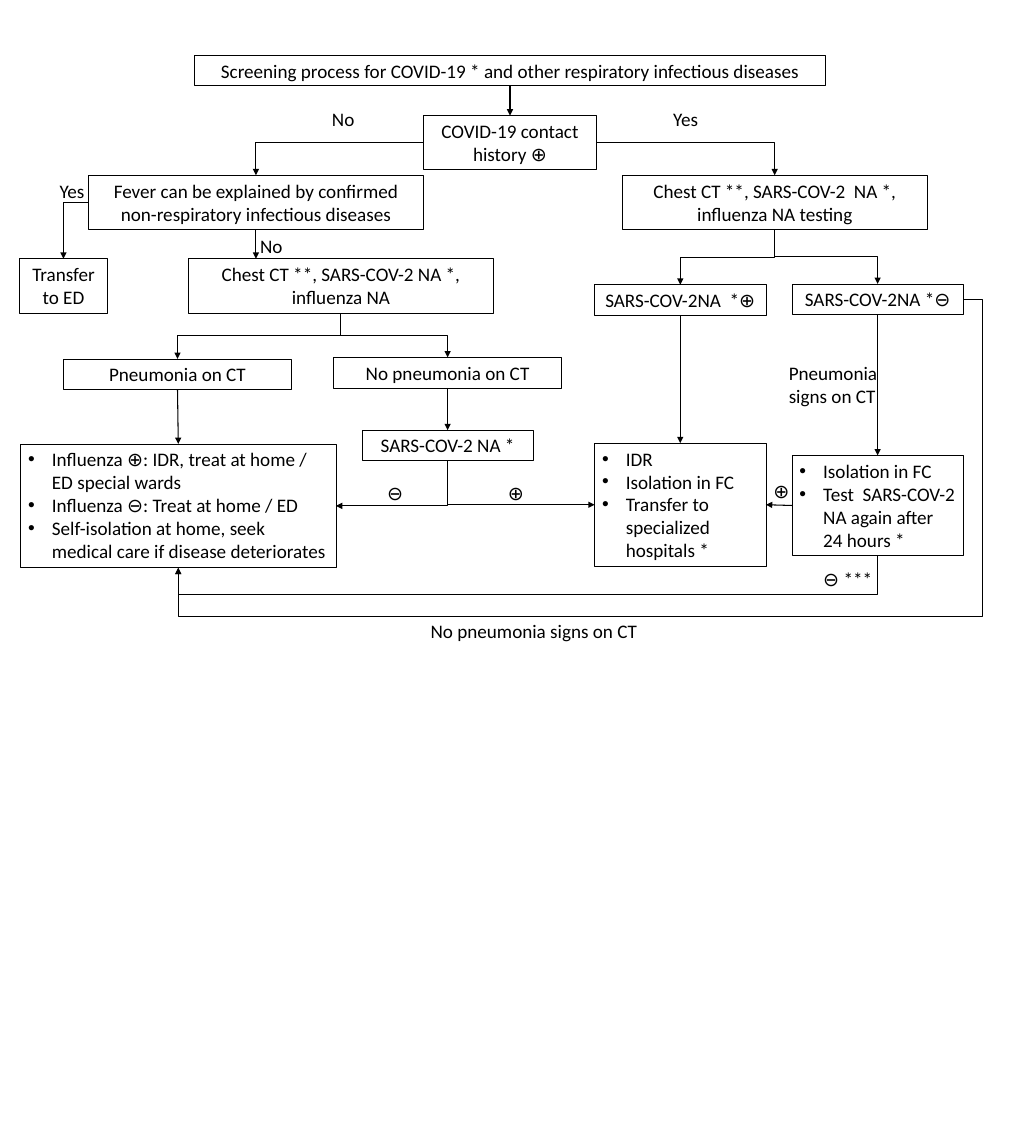
from dataclasses import dataclass
from enum import IntEnum
from typing import Optional

from lxml.etree import SubElement
from pptx import Presentation
from pptx.dml.color import RGBColor
from pptx.enum.shapes import MSO_CONNECTOR, MSO_SHAPE
from pptx.enum.text import MSO_ANCHOR, MSO_AUTO_SIZE, PP_ALIGN
from pptx.oxml.ns import qn
from pptx.util import Inches, Pt

BLACK = RGBColor(0x00, 0x00, 0x00)
FONT = "Calibri"
ONE_LINE = 0.4
TWO_LINES = 0.71
BULLET_INDENT = Inches(0.31)


class Side(IntEnum):
    TOP = 0
    LEFT = 1
    BOTTOM = 2
    RIGHT = 3


@dataclass(frozen=True)
class Box:
    name: str
    left: float
    top: float
    width: float
    height: float
    lines: tuple[str, ...]
    bulleted: bool = False


@dataclass(frozen=True)
class Link:
    begin: str
    begin_side: Side
    end: str
    end_side: Optional[Side] = None
    preset: str = "line"
    detours: tuple[float, ...] = ()


@dataclass(frozen=True)
class Label:
    left: float
    top: float
    width: float
    height: float
    text: str
    wrap: bool = False


TITLE = Box("screening", 2.54, 0.72, 8.25, ONE_LINE,
            ("Screening process for COVID-19 * and other respiratory infectious diseases",))

BOXES = [
    Box("contact", 5.53, 1.51, 2.27, TWO_LINES, ("COVID-19 contact history ⊕",)),
    Box("contact tests", 8.13, 2.29, 3.99, TWO_LINES,
        ("Chest CT **, SARS-COV-2  NA *, influenza NA testing",)),
    Box("fever", 1.16, 2.29, 4.37, TWO_LINES,
        ("Fever can be explained by confirmed non-respiratory infectious diseases",)),
    Box("pneumonia", 0.83, 4.69, 2.98, ONE_LINE, ("Pneumonia on CT",)),
    Box("emergency", 0.25, 3.38, 1.16, TWO_LINES, ("Transfer to ED",)),
    Box("fever tests", 2.46, 3.38, 3.99, TWO_LINES,
        ("Chest CT **, SARS-COV-2 NA *, influenza NA",)),
    Box("no pneumonia", 4.36, 4.67, 2.98, ONE_LINE, ("No pneumonia on CT",)),
    Box("home care", 0.27, 5.8, 4.12, 1.62,
        ("Influenza ⊕: IDR, treat at home / ED special wards",
         "Influenza ⊖: Treat at home / ED",
         "Self-isolation at home, seek medical care if disease deteriorates"), True),
    Box("virus test", 4.73, 5.62, 2.24, ONE_LINE, ("SARS-COV-2 NA *",)),
    Box("negative", 10.35, 3.71, 2.24, ONE_LINE, ("SARS-COV-2NA *⊖",)),
    Box("positive", 7.77, 3.72, 2.24, ONE_LINE, ("SARS-COV-2NA  *⊕",)),
    Box("retest", 10.35, 5.95, 2.24, 1.31,
        ("Isolation in FC", "Test  SARS-COV-2 NA again after 24 hours *"), True),
    Box("hospital", 7.77, 5.79, 2.24, 1.61,
        ("IDR", "Isolation in FC", "Transfer to specialized hospitals *"), True),
]

LINKS = [
    Link("screening", Side.BOTTOM, "contact", Side.TOP),
    Link("contact", Side.RIGHT, "contact tests", Side.TOP, "bentConnector2"),
    Link("contact", Side.LEFT, "fever", Side.TOP, "bentConnector2"),
    Link("fever", Side.LEFT, "emergency", Side.TOP, "bentConnector2"),
    Link("fever", Side.BOTTOM, "fever tests"),
    Link("fever tests", Side.BOTTOM, "pneumonia", Side.TOP, "bentConnector3"),
    Link("fever tests", Side.BOTTOM, "no pneumonia", Side.TOP, "bentConnector3"),
    Link("contact tests", Side.BOTTOM, "positive", Side.TOP, "bentConnector3"),
    Link("contact tests", Side.BOTTOM, "negative", Side.TOP, "bentConnector3"),
    Link("pneumonia", Side.BOTTOM, "home care", Side.TOP),
    Link("no pneumonia", Side.BOTTOM, "virus test", Side.TOP),
    Link("virus test", Side.BOTTOM, "home care", Side.RIGHT, "bentConnector2"),
    Link("virus test", Side.BOTTOM, "hospital", Side.LEFT, "bentConnector2"),
    Link("positive", Side.BOTTOM, "hospital", Side.TOP),
    Link("negative", Side.BOTTOM, "retest", Side.TOP),
    Link("retest", Side.BOTTOM, "home care", Side.BOTTOM, "bentConnector3", (0.51,)),
    Link("negative", Side.RIGHT, "home care", Side.BOTTOM, "bentConnector4", (-0.25, 4.15)),
    Link("retest", Side.LEFT, "hospital", Side.RIGHT),
]

LABELS = [
    Label(0.68, 2.3, 0.53, ONE_LINE, "Yes"),
    Label(3.3, 3.01, 0.5, ONE_LINE, "No"),
    Label(4.24, 1.36, 0.5, ONE_LINE, "No"),
    Label(8.7, 1.35, 0.53, ONE_LINE, "Yes"),
    Label(6.54, 6.24, 0.4, ONE_LINE, "⊕"),
    Label(4.96, 6.24, 0.45, ONE_LINE, "⊖"),
    Label(10.01, 6.21, 0.4, ONE_LINE, "⊕"),
    Label(10.66, 7.37, 0.89, ONE_LINE, "⊖ ***"),
    Label(10.21, 4.67, 1.47, TWO_LINES, "Pneumonia signs on CT", True),
    Label(5.53, 8.04, 3.36, ONE_LINE, "No pneumonia signs on CT", True),
]


def write_text(shape, lines, *, alignment=PP_ALIGN.LEFT, bulleted=False, wrap=True,
               auto_size=MSO_AUTO_SIZE.SHAPE_TO_FIT_TEXT) -> None:
    frame = shape.text_frame
    frame.word_wrap = wrap
    frame.auto_size = auto_size
    frame.vertical_anchor = MSO_ANCHOR.TOP
    frame.text = "\n".join(lines)
    for paragraph in frame.paragraphs:
        paragraph.alignment = alignment
        if bulleted:
            properties = paragraph._p.get_or_add_pPr()
            properties.set("marL", str(BULLET_INDENT))
            properties.set("indent", str(-BULLET_INDENT))
            SubElement(properties, qn("a:buFont"), typeface="Arial")
            SubElement(properties, qn("a:buChar"), char="•")
        for run in paragraph.runs:
            run.font.name = FONT
            run.font.size = Pt(18)
            run.font.color.rgb = BLACK


def format_box(shape, box: Box, **text_format) -> None:
    shape.fill.background()
    shape.line.color.rgb = BLACK
    shape.line.width = Pt(0.75)
    alignment = PP_ALIGN.LEFT if box.bulleted else PP_ALIGN.CENTER
    write_text(shape, box.lines, alignment=alignment, bulleted=box.bulleted, **text_format)


def draw_title(slide, box: Box):
    shape = slide.shapes.title
    shape.left, shape.top = Inches(box.left), Inches(box.top)
    shape.width, shape.height = Inches(box.width), Inches(box.height)
    format_box(shape, box, auto_size=MSO_AUTO_SIZE.NONE)
    return shape


def draw_box(slide, box: Box):
    shape = slide.shapes.add_shape(
        MSO_SHAPE.RECTANGLE, Inches(box.left), Inches(box.top), Inches(box.width), Inches(box.height))
    shape.shadow.inherit = False
    format_box(shape, box)
    return shape


def bend(connector, link: Link) -> None:
    across = connector.end_x - connector.begin_x
    width, height = connector.width, connector.height
    center_x, center_y = connector.left + width // 2, connector.top + height // 2
    upright = link.begin_side == Side.BOTTOM
    length, breadth = (height, width) if upright else (width, height)
    connector.left, connector.top = center_x - length // 2, center_y - breadth // 2
    connector.width, connector.height = length, breadth
    transform = connector._element.spPr.find(qn("a:xfrm"))
    rightward_drop = upright and across > 0
    transform.set("rot", str((270 if rightward_drop else 90) * 60000 if upright else 0))
    transform.set("flipH", str(int(rightward_drop or (not upright and across < 0))))
    transform.set("flipV", "0")
    geometry = connector._element.spPr.find(qn("a:prstGeom"))
    geometry.set("prst", link.preset)
    guides = geometry.find(qn("a:avLst"))
    for number, (detour, extent) in enumerate(zip(link.detours, (length, breadth)), 1):
        value = round(Inches(detour) / extent * 100000)
        SubElement(guides, qn("a:gd"), name=f"adj{number}", fmla=f"val {value}")


def draw_link(slide, link: Link, shapes: dict) -> None:
    straight = link.preset == "line"
    kind = MSO_CONNECTOR.STRAIGHT if straight else MSO_CONNECTOR.ELBOW
    connector = slide.shapes.add_connector(kind, 0, 0, 0, 0)
    connector.begin_connect(shapes[link.begin], link.begin_side)
    if link.end_side is None:
        connector.end_x, connector.end_y = connector.begin_x, shapes[link.end].top
    else:
        connector.end_connect(shapes[link.end], link.end_side)
    if not straight:
        bend(connector, link)
    connector.line.color.rgb = BLACK
    connector.line.width = Pt(1)
    SubElement(connector.line._get_or_add_ln(), qn("a:tailEnd"), type="triangle")
    SubElement(connector._element.spPr, qn("a:effectLst"))


def draw_label(slide, label: Label) -> None:
    shape = slide.shapes.add_textbox(
        Inches(label.left), Inches(label.top), Inches(label.width), Inches(label.height))
    write_text(shape, (label.text,), wrap=label.wrap)


def main() -> None:
    presentation = Presentation()
    presentation.slide_width, presentation.slide_height = Inches(13.33), Inches(15)
    slide = presentation.slides.add_slide(presentation.slide_layouts[5])
    shapes = {TITLE.name: draw_title(slide, TITLE)}
    for box in BOXES:
        shapes[box.name] = draw_box(slide, box)
    for link in LINKS:
        draw_link(slide, link, shapes)
    for label in LABELS:
        draw_label(slide, label)
    presentation.save("out.pptx")


if __name__ == "__main__":
    main()
